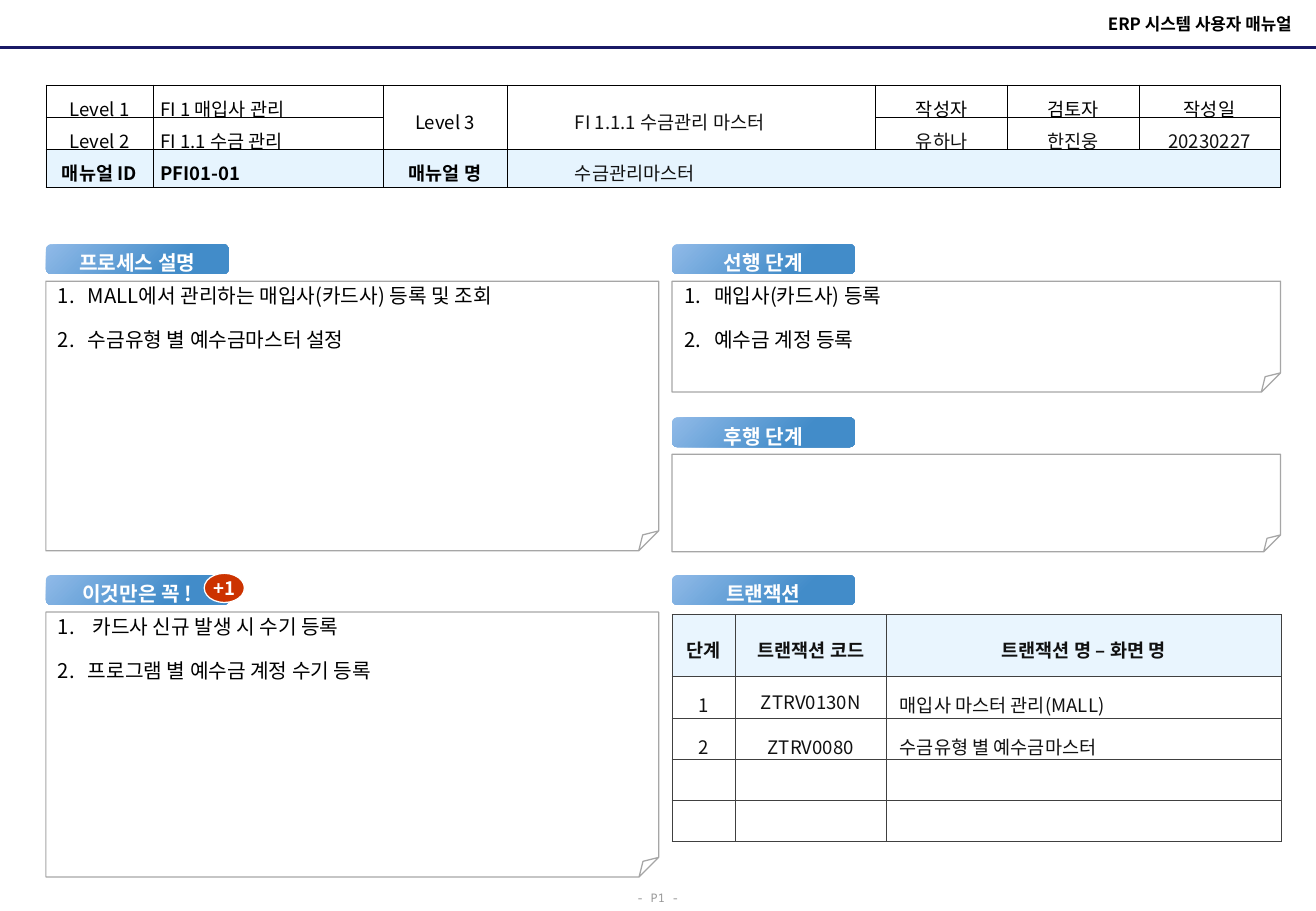
from lxml.etree import SubElement
from pptx import Presentation
from pptx.dml.color import RGBColor
from pptx.enum.shapes import MSO_CONNECTOR, MSO_SHAPE
from pptx.enum.text import MSO_ANCHOR, PP_ALIGN
from pptx.oxml import parse_xml
from pptx.oxml.ns import nsdecls, qn
from pptx.util import Cm, Pt

LEFT, RIGHT = 0.96, 14.05
LEFT_WIDTH, RIGHT_WIDTH = 12.81, 12.72
UPPER, MIDDLE, LOWER = 5.11, 8.73, 12.03
CENTER, END = PP_ALIGN.CENTER, PP_ALIGN.RIGHT
PALE_BLUE, INK = "93D1FB", "111111"


def color(hex_string):
    return RGBColor.from_string(hex_string)


def paint(fill, hex_string, opacity=None):
    fill.solid()
    fill.fore_color.rgb = color(hex_string)
    if opacity is not None:
        element = fill._xPr.find(".//" + qn("a:srgbClr"))
        SubElement(element, qn("a:alpha")).set("val", str(opacity * 1000))


def write(frame, text, size=11, ink="000000", bold=False, font="Noto Sans CJK KR",
          align=PP_ALIGN.LEFT, spacing=None, gap=0, indent=0, numbered=False):
    """Fill a text frame with one paragraph per line of text."""
    for index, line in enumerate(text.split("\n")):
        paragraph = frame.add_paragraph() if index else frame.paragraphs[0]
        paragraph.alignment = align
        if spacing:
            paragraph.line_spacing = spacing
        if index and gap:
            paragraph.space_before = Pt(gap)
        properties = paragraph._p.get_or_add_pPr()
        if indent:
            properties.set("marL", str(Cm(indent)))
        if numbered:
            properties.set("indent", str(-Cm(indent)))
            SubElement(properties, qn("a:buAutoNum")).set("type", "arabicPeriod")
        if not line:
            SubElement(paragraph._p, qn("a:endParaRPr")).set("sz", str(size * 100))
            continue
        run = paragraph.add_run()
        run.text = line
        run.font.size, run.font.bold, run.font.name = Pt(size), bold, font
        run.font.color.rgb = color(ink)
        SubElement(run._r.get_or_add_rPr(), qn("a:ea")).set("typeface", font)


def set_margins(target, left, top, right, bottom):
    target.margin_left, target.margin_top = Cm(left), Cm(top)
    target.margin_right, target.margin_bottom = Cm(right), Cm(bottom)


def set_fold(shape, fold):
    """Set the size of the folded corner as a share of the shorter side."""
    geometry = shape._element.spPr.find(qn("a:prstGeom"))
    for guides in geometry.findall(qn("a:avLst")):
        geometry.remove(guides)
    guide = SubElement(SubElement(geometry, qn("a:avLst")), qn("a:gd"))
    guide.set("name", "adj")
    guide.set("fmla", f"val {round(fold * 100000)}")


def add_borders(cell, hex_string):
    properties = cell._tc.get_or_add_tcPr()
    for index, side in enumerate(("lnL", "lnR", "lnT", "lnB")):
        properties.insert(index, parse_xml(
            f'<a:{side} {nsdecls("a")} w="6350"><a:solidFill>'
            f'<a:srgbClr val="{hex_string}"/></a:solidFill></a:{side}>'))


class ManualPage:
    label_size = (3.82, 0.62)
    outline = "A6A6A6"

    def __init__(self, presentation):
        self.slide = presentation.slides.add_slide(presentation.slide_layouts[6])

    def shape(self, kind, left, top, width, height):
        shape = self.slide.shapes.add_shape(kind, Cm(left), Cm(top), Cm(width), Cm(height))
        shape.shadow.inherit = False
        return shape

    def text(self, text, left, top, width, height, wrap=True, **style):
        box = self.slide.shapes.add_textbox(Cm(left), Cm(top), Cm(width), Cm(height))
        box.text_frame.word_wrap = wrap
        box.text_frame.vertical_anchor = MSO_ANCHOR.MIDDLE if wrap else MSO_ANCHOR.TOP
        write(box.text_frame, text, **style)

    def rule(self, top, width):
        line = self.slide.shapes.add_connector(
            MSO_CONNECTOR.STRAIGHT, 0, Cm(top), Cm(width), Cm(top))
        line.line.color.rgb = color("191966")
        line.line.width = Pt(1.5)
        SubElement(line._element.spPr, qn("a:effectLst"))

    def label(self, text, left, top):
        shape = self.shape(MSO_SHAPE.ROUNDED_RECTANGLE, left, top, *self.label_size)
        shape.line.fill.background()
        shape.fill.gradient()
        shape.fill.gradient_angle = 315
        start, finish = shape.fill.gradient_stops
        start.color.rgb, finish.color.rgb = color("90BAE8"), color("428CC9")
        start.position, finish.position = 0, 0.7
        frame = shape.text_frame
        set_margins(frame, 0, 0, 0, 0.1)
        frame.vertical_anchor = MSO_ANCHOR.MIDDLE
        write(frame, text, size=12, ink="FFFFFF", bold=True, align=CENTER, spacing=1.5)

    def note(self, text, left, top, width, height, fold):
        shape = self.shape(MSO_SHAPE.FOLDED_CORNER, left, top, width, height)
        set_fold(shape, fold)
        shape.fill.background()
        shape.line.color.rgb = color(self.outline)
        shape.line.width = Pt(0.75)
        if text:
            shape.text_frame.vertical_anchor = MSO_ANCHOR.TOP
            write(shape.text_frame, text, size=12, spacing=0.83, gap=14.5,
                  indent=0.63, numbered=True)

    def badge(self, text, left, top, width, height):
        shape = self.shape(MSO_SHAPE.OVAL, left, top, width, height)
        paint(shape.fill, "CC3300")
        shape.line.color.rgb = color("FFFFFF")
        shape.line.width = Pt(0.75)
        shape.text_frame.word_wrap = False
        shape.text_frame.vertical_anchor = MSO_ANCHOR.MIDDLE
        write(shape.text_frame, text, ink="FFFFFF", bold=True, align=CENTER)

    def table(self, rows, left, top, widths, heights, border, margins, format_cell, merges=()):
        """Draw a table; format_cell(row, column) gives fill, opacity and text style."""
        frame = self.slide.shapes.add_table(len(rows), len(widths), Cm(left), Cm(top),
                                            Cm(sum(widths)), Cm(sum(heights)))
        table = frame.table
        for column, width in zip(table.columns, widths):
            column.width = Cm(width)
        for row, height in zip(table.rows, heights):
            row.height = Cm(height)
        for first, last in merges:
            table.cell(*first).merge(table.cell(*last))
        for row, texts in enumerate(rows):
            for column, text in enumerate(texts):
                cell = table.cell(row, column)
                fill, opacity, style = format_cell(row, column)
                set_margins(cell, *margins)
                cell.vertical_anchor = MSO_ANCHOR.MIDDLE
                if fill:
                    paint(cell.fill, fill, opacity)
                else:
                    cell.fill.background()
                add_borders(cell, border)
                write(cell.text_frame, text, spacing=1.3, **style)
        return table


def format_heading(row, column):
    last = row == 2
    style = {"align": PP_ALIGN.LEFT if column in (1, 3) else CENTER,
             "bold": last and column < 3,
             "indent": 1.27 if column == 3 else 0,
             "ink": INK if column == 3 or (row == 1 and column > 3) else "000000"}
    return (PALE_BLUE, 23, style) if last else ("FFFFFF", None, style)


def format_transaction(row, column):
    header = row == 0
    style = {"align": CENTER if header or column < 2 else PP_ALIGN.LEFT,
             "bold": header, "ink": INK}
    return (PALE_BLUE, 20, style) if header else (None, None, style)


def main():
    presentation = Presentation()
    presentation.slide_width, presentation.slide_height = Cm(27.51), Cm(19.05)
    page = ManualPage(presentation)
    page.text("- P1 -", 13.06, 18.42, 1.42, 0.64, wrap=False, size=7, ink="969696",
              font="Noto Sans Mono", spacing=1.3)
    page.rule(0.99, 27.51)
    page.text("ERP 시스템 사용자 매뉴얼", 15.34, 0.15, 11.91, 0.69, size=10, bold=True, align=END)
    page.table(
        [["Level 1", "FI 1 매입사 관리", "Level 3", "FI 1.1.1 수금관리 마스터",
          "작성자", "검토자", "작성일"],
         ["Level 2", "FI 1.1 수금 관리", "", "", "유하나", "한진웅", "20230227"],
         ["매뉴얼 ID", "PFI01-01", "매뉴얼 명", "수금관리마스터", "", "", ""]],
        LEFT, 1.78, [2.24, 4.81, 2.59, 7.71, 2.75, 2.75, 2.95], [0.67, 0.67, 0.8],
        "000000", (0.15, 0.03, 0.15, 0.03), format_heading,
        merges=[((0, 2), (1, 2)), ((0, 3), (1, 3)), ((2, 3), (2, 6))])
    transactions = page.table(
        [["단계", "트랜잭션 코드", "트랜잭션 명 – 화면 명"],
         ["1", "ZTRV0130N", "매입사 마스터 관리(MALL)"],
         ["2", "ZTRV0080", "수금유형 별 예수금마스터"],
         [""] * 3, [""] * 3],
        RIGHT, 12.85, [1.32, 3.16, 8.25], [1.3] + [0.86] * 4,
        "404040", (0.28, 0.13, 0.28, 0.13), format_transaction)
    set_margins(transactions.cell(1, 1), 0, 0, 0, 0)
    for text, left, top in [("프로세스 설명", LEFT, UPPER), ("선행 단계", RIGHT, UPPER),
                            ("후행 단계", RIGHT, MIDDLE), ("트랜잭션", RIGHT, LOWER),
                            ("이것만은 꼭 !", LEFT, LOWER)]:
        page.label(text, left, top)
    page.badge("+1", 4.27, 11.99, 0.84, 0.61)
    offset = 0.77
    for text, left, top, width, height, fold in [
            ("MALL에서 관리하는 매입사(카드사) 등록 및 조회\n수금유형 별 예수금마스터 설정",
             LEFT, UPPER, LEFT_WIDTH, 5.64, 0.074),
            ("매입사(카드사) 등록\n예수금 계정 등록", RIGHT, UPPER, RIGHT_WIDTH, 2.32, 0.173),
            ("", RIGHT, MIDDLE, RIGHT_WIDTH, 2.04, 0.173),
            (" 카드사 신규 발생 시 수기 등록\n프로그램 별 예수금 계정 수기 등록",
             LEFT, LOWER, LEFT_WIDTH, 5.54, 0.074)]:
        page.note(text, left, top + offset, width, height, fold)
    presentation.save("out.pptx")


if __name__ == "__main__":
    main()
